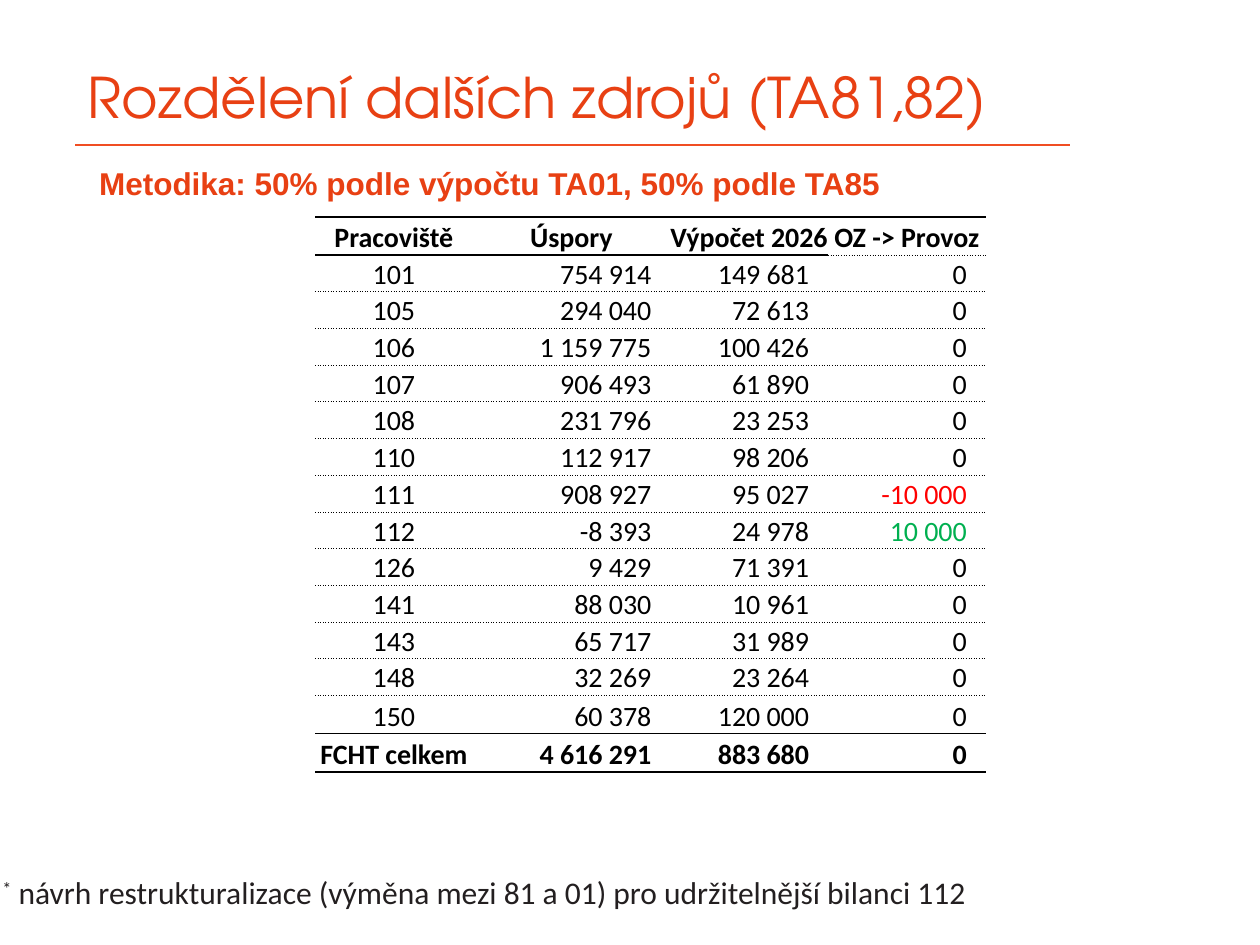
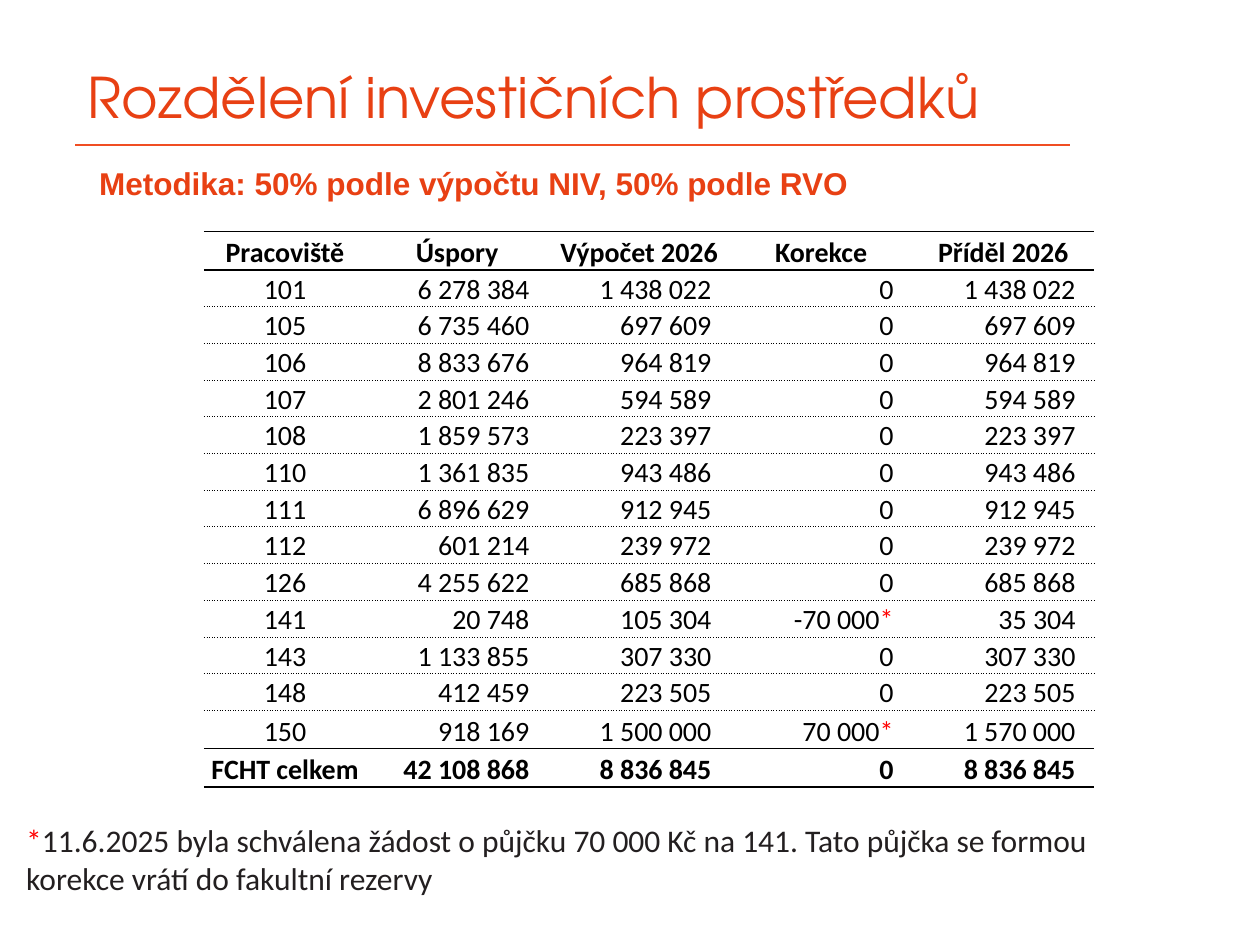
from lxml.etree import SubElement as Sub
from pptx import Presentation
from pptx.dml.color import RGBColor as RGB
from pptx.enum.shapes import MSO_CONNECTOR as Conn
from pptx.enum.text import MSO_ANCHOR as Anchor, PP_ALIGN as Align
from pptx.oxml.ns import qn
from pptx.util import Cm, Pt

ORANGE = RGB(0xE8, 0x40, 0x13)
RULE = RGB(0xF0, 0x4E, 0x23)
INK = RGB(0x23, 0x1F, 0x20)
BLACK = RGB(0, 0, 0)
RED = RGB(0xFF, 0, 0)
GREEN = RGB(0, 0xB0, 0x50)

HEAD, BODY, GRID = "TeX Gyre Adventor", "Arial", "Calibri"

FUNDS = [
    ("Pracoviště", "Úspory", "Výpočet 2026", "OZ -> Provoz"),
    ("101", "754 914", "149 681", "0"),
    ("105", "294 040", "72 613", "0"),
    ("106", "1 159 775", "100 426", "0"),
    ("107", "906 493", "61 890", "0"),
    ("108", "231 796", "23 253", "0"),
    ("110", "112 917", "98 206", "0"),
    ("111", "908 927", "95 027", "-10 000"),
    ("112", "-8 393", "24 978", "10 000"),
    ("126", "9 429", "71 391", "0"),
    ("141", "88 030", "10 961", "0"),
    ("143", "65 717", "31 989", "0"),
    ("148", "32 269", "23 264", "0"),
    ("150", "60 378", "120 000", "0"),
    ("FCHT celkem", "4 616 291", "883 680", "0"),
]

INVEST = [
    ("Pracoviště", "Úspory", "Výpočet 2026", "Korekce", "Příděl 2026"),
    ("101", "6 278 384", "1 438 022", "0", "1 438 022"),
    ("105", "6 735 460", "697 609", "0", "697 609"),
    ("106", "8 833 676", "964 819", "0", "964 819"),
    ("107", "2 801 246", "594 589", "0", "594 589"),
    ("108", "1 859 573", "223 397", "0", "223 397"),
    ("110", "1 361 835", "943 486", "0", "943 486"),
    ("111", "6 896 629", "912 945", "0", "912 945"),
    ("112", "601 214", "239 972", "0", "239 972"),
    ("126", "4 255 622", "685 868", "0", "685 868"),
    ("141", "20 748", "105 304", "-70 000*", "35 304"),
    ("143", "1 133 855", "307 330", "0", "307 330"),
    ("148", "412 459", "223 505", "0", "223 505"),
    ("150", "918 169", "1 500 000", "70 000*", "1 570 000"),
    ("FCHT celkem", "42 108 868", "8 836 845", "0", "8 836 845"),
]


class Deck:
    def __init__(self):
        self.prs = Presentation()
        self.prs.slide_width, self.prs.slide_height = Cm(25.4), Cm(19.05)
        self.slide = None

    def page(self, title, method):
        """Start a slide with its title, rule and method line."""
        self.slide = self.prs.slides.add_slide(self.prs.slide_layouts[6])
        self.rule(1.52, 21.56, 2.92)
        frame = self.box(1.52, 1.32, 20.32, 1.4)
        frame.vertical_anchor = Anchor.MIDDLE
        par = frame.paragraphs[0]
        par.line_spacing = 0.9
        self.run(par, title, HEAD, 32, ORANGE)
        frame = self.box(1.52, 3.33, 23.14, 14.15)
        frame.margin_left = Cm(0.48)
        par = frame.paragraphs[0]
        par.line_spacing = 0.8
        self.run(par, method, BODY, 18, ORANGE, True)

    def rule(self, left, right, top):
        line = self.slide.shapes.add_connector(
            Conn.STRAIGHT, Cm(left), Cm(top), Cm(right), Cm(top))
        line.line.color.rgb = RULE
        line.line.width = Pt(1)
        Sub(line._element.spPr, qn("a:effectLst"))

    def box(self, left, top, width, height, wrap=True):
        frame = self.slide.shapes.add_textbox(
            Cm(left), Cm(top), Cm(width), Cm(height)).text_frame
        frame.word_wrap = wrap
        return frame

    def run(self, par, text, face, size, color, bold=False):
        run = par.add_run()
        run.text = text
        font = run.font
        font.name, font.size, font.bold = face, Pt(size), bold
        font.color.rgb = color
        return run

    def note(self, place, text, star, wrap=True, raised=False):
        par = self.box(*place, wrap).paragraphs[0]
        mark = self.run(par, "*", GRID, 18, star)
        if raised:
            mark._r.get_or_add_rPr().set("baseline", "30000")
        self.run(par, text, GRID, 18, INK)

    def table(self, left, top, widths, rows, tints=None, soft=()):
        """Draw rows; tints colours values, soft lists (line, column) kept dotted."""
        last = len(rows) - 1
        solid = {0, 1, last, last + 1}
        tall = {0, last - 1, last}
        highs = [0.77 if r in tall else 0.74 for r in range(len(rows))]
        table = self.slide.shapes.add_table(
            len(rows), len(widths), Cm(left), Cm(top),
            Cm(sum(widths)), Cm(sum(highs))).table
        table.first_row = table.horz_banding = False
        for col, width in zip(table.columns, widths):
            col.width = Cm(width)
        for r, row in enumerate(rows):
            table.rows[r].height = Cm(highs[r])
            for c, text in enumerate(row):
                cell = table.cell(r, c)
                firm = [n in solid and (n, c) not in soft for n in (r, r + 1)]
                self.edges(cell, *firm)
                self.fill(cell, text, r == 0 or c == 0, r in (0, last),
                          (tints or {}).get(text, BLACK))

    def fill(self, cell, text, center, bold, color):
        cell.fill.background()
        cell.vertical_anchor = Anchor.BOTTOM
        cell.margin_left = cell.margin_top = cell.margin_bottom = 0
        cell.margin_right = 0 if center else Cm(0.38)
        par = cell.text_frame.paragraphs[0]
        par.alignment = Align.CENTER if center else Align.RIGHT
        self.run(par, text.rstrip("*"), GRID, 16, color, bold)
        if text.endswith("*"):
            self.run(par, "*", GRID, 16, RED, bold)

    def edges(self, cell, above, below):
        """Rule a cell above and below: solid where true, else dotted."""
        props = cell._tc.get_or_add_tcPr()
        for tag in ("a:lnL", "a:lnR"):
            Sub(Sub(props, qn(tag), w="0"), qn("a:noFill"))
        for tag, firm in (("a:lnT", above), ("a:lnB", below)):
            line = Sub(props, qn(tag), w=str(Pt(1 if firm else 0.5)))
            Sub(Sub(line, qn("a:solidFill")), qn("a:srgbClr"), val=str(BLACK))
            Sub(line, qn("a:prstDash"), val="solid" if firm else "dot")


def main():
    deck = Deck()

    deck.page("Rozdělení dalších zdrojů (TA81,82)",
              "Metodika: 50% podle výpočtu TA01, 50% podle TA85")
    deck.note((-0.2, 17.48, 20.37, 1.02),
              " návrh restrukturalizace (výměna mezi 81 a 01) "
              "pro udržitelnější bilanci 112", INK, wrap=False, raised=True)
    deck.table(6.35, 4.37, [3.18, 3.98, 3.18, 3.18], FUNDS,
               {"-10 000": RED, "10 000": GREEN}, soft={(1, 3)})

    deck.page("Rozdělení investičních prostředků",
              "Metodika: 50% podle výpočtu NIV, 50% podle RVO")
    deck.note((0.28, 16.43, 23.9, 1.8),
              "11.6.2025 byla schválena žádost o půjčku 70 000 Kč na 141. "
              "Tato půjčka se formou korekce vrátí do fakultní rezervy", RED)
    deck.table(4.11, 4.67, [3.27] + [3.67] * 4, INVEST)

    deck.prs.save("out.pptx")


if __name__ == "__main__":
    main()
